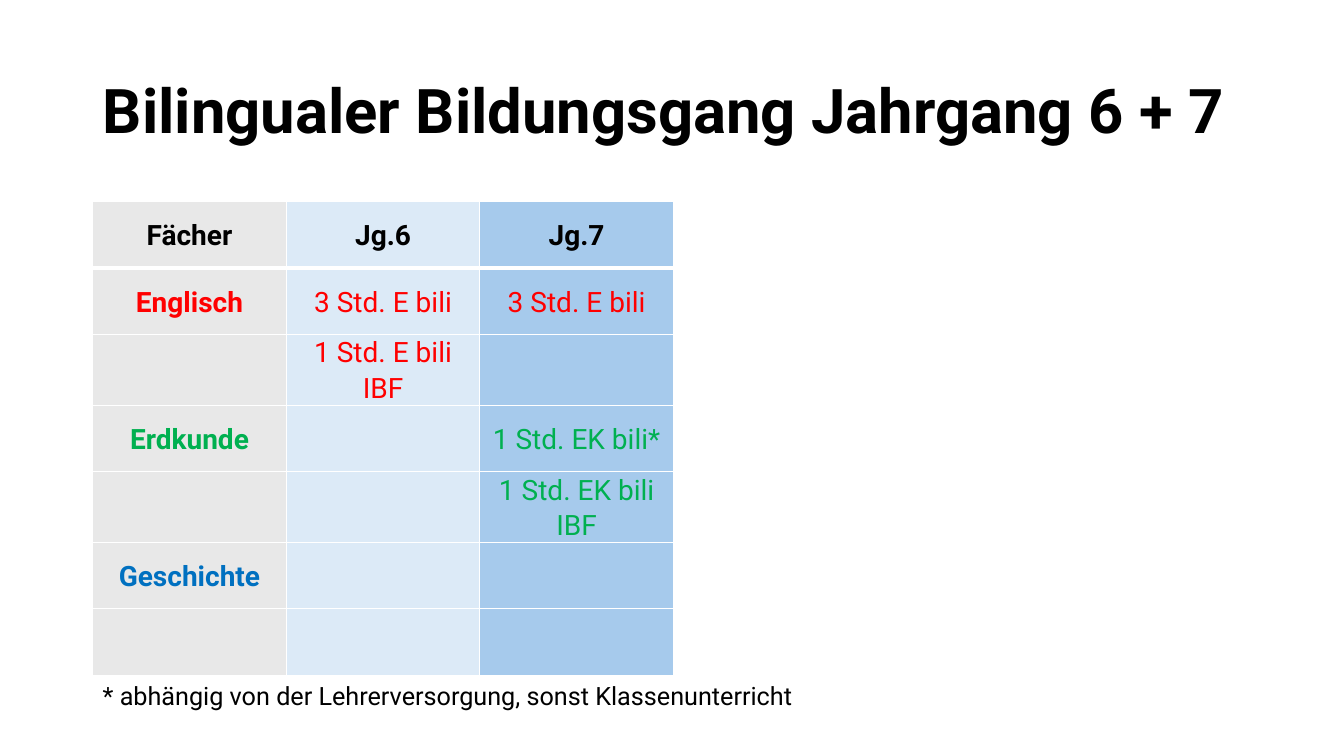
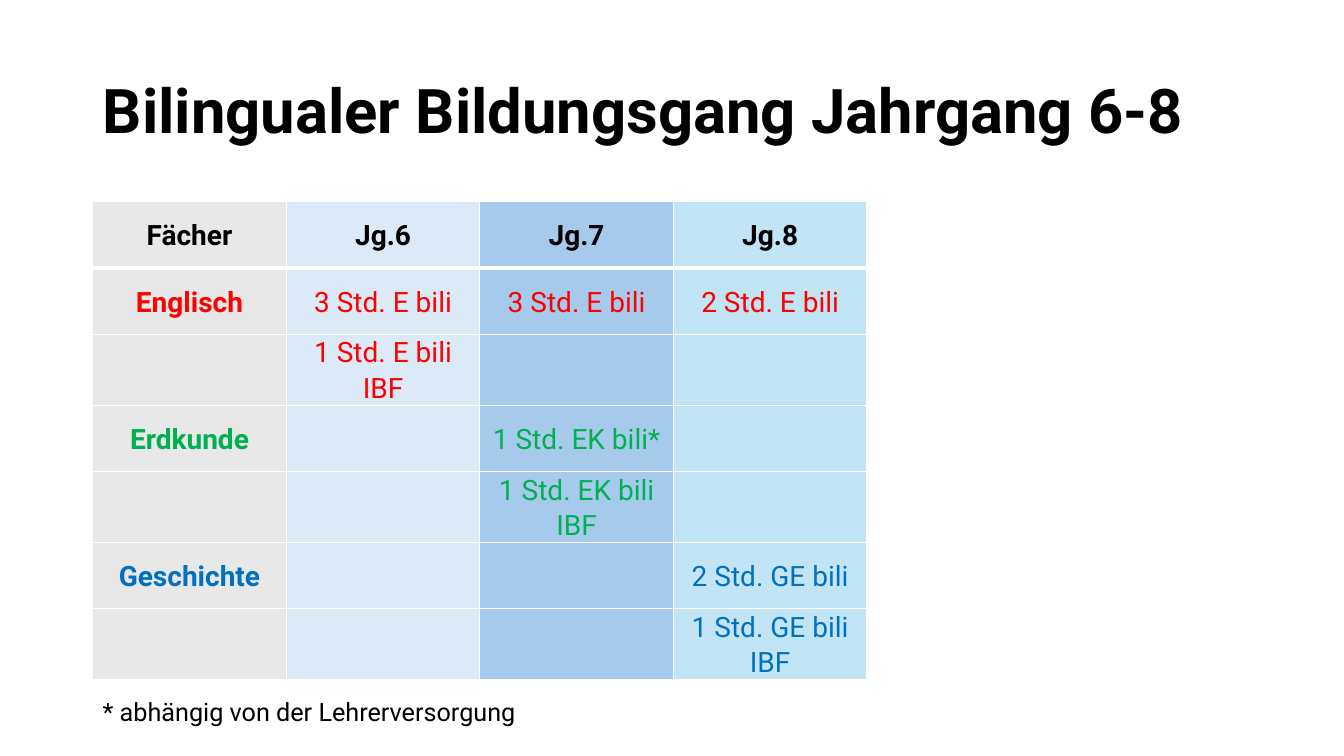
from lxml import etree
from pptx import Presentation
from pptx import util as u
from pptx.dml.color import RGBColor
from pptx.enum import text
from pptx.oxml import ns

PX = 9144
FONT = "Roboto"
BLACK = RGBColor(0x00, 0x00, 0x00)
WHITE = RGBColor(0xFF, 0xFF, 0xFF)
RED = RGBColor(0xFF, 0x00, 0x00)
GREEN = RGBColor(0x00, 0xB0, 0x50)
BLUE = RGBColor(0x00, 0x70, 0xC0)
GREY = RGBColor(0xE8, 0xE8, 0xE8)
PALE_BLUE = RGBColor(0xDC, 0xEA, 0xF7)
MID_BLUE = RGBColor(0xA6, 0xCA, 0xEC)
CYAN = RGBColor(0xC1, 0xE5, 0xF5)

TITLE_BOX = (92, 40, 1150, 145)
TABLE_LEFT, TABLE_TOP = 92, 200
COLUMN_WIDTH, ROW_HEIGHT = 192, 66
ROW_COLORS = (BLACK, RED, RED, GREEN, GREEN, BLUE, BLUE)

SUBJECTS = (GREY, ("Fächer", "Englisch", "", "Erdkunde", "", "Geschichte", ""))
GRADE_6 = (PALE_BLUE, ("Jg.6", "3 Std. E bili", "1 Std. E bili IBF", "", "", "", ""))
GRADE_7 = (MID_BLUE, ("Jg.7", "3 Std. E bili", "", "1 Std. EK bili*",
                      "1 Std. EK bili IBF", "", ""))
GRADE_8 = (CYAN, ("Jg.8", "2 Std. E bili", "", "", "",
                  "2 Std. GE bili", "1 Std. GE bili IBF"))


def px(*lengths):
    """Turn px lengths into EMU."""
    return [u.Emu(length * PX) for length in lengths]


def add_span(para, words, size, color=BLACK, bold=False):
    """Add one formatted run to a paragraph."""
    span = para.add_run()
    span.text = words
    span.font.name = FONT
    span.font.size = u.Pt(size)
    span.font.bold = bold
    span.font.color.rgb = color


def add_title(page, words):
    """Place and fill the title placeholder."""
    title = page.shapes.title
    title.left, title.top, title.width, title.height = px(*TITLE_BOX)
    frame = title.text_frame
    frame.word_wrap = True
    frame.auto_size = text.MSO_AUTO_SIZE.NONE
    frame.vertical_anchor = text.MSO_ANCHOR.MIDDLE
    para = frame.paragraphs[0]
    para.alignment = text.PP_ALIGN.LEFT
    para.line_spacing = 0.9
    add_span(para, words, 44, bold=True)


def add_borders(cell, row):
    """Draw white cell borders, thicker below the header row."""
    widths = {"L": 1, "R": 1, "T": 3 if row == 1 else 1, "B": 3 if row == 0 else 1}
    properties = cell._tc.get_or_add_tcPr()
    for side, width in widths.items():
        line = etree.SubElement(properties, ns.qn(f"a:ln{side}"), w=str(u.Pt(width)))
        fill = etree.SubElement(line, ns.qn("a:solidFill"))
        etree.SubElement(fill, ns.qn("a:srgbClr"), val=str(WHITE))


def fill_cell(cell, row, words, background, bold):
    """Format one table cell and write its words."""
    add_borders(cell, row)
    cell.fill.solid()
    cell.fill.fore_color.rgb = background
    cell.vertical_anchor = text.MSO_ANCHOR.MIDDLE
    cell.margin_left, cell.margin_right, cell.margin_top, cell.margin_bottom = px(7, 7, 0, 0)
    para = cell.text_frame.paragraphs[0]
    para.alignment = text.PP_ALIGN.CENTER
    para.line_spacing = 1.07
    para.space_before = para.space_after = u.Pt(6)
    if words:
        add_span(para, words, 20, ROW_COLORS[row], bold)


def add_timetable(page, left, top, columns):
    """Build the table of subjects by grade, one column at a time."""
    rows = len(ROW_COLORS)
    box = px(left, top, COLUMN_WIDTH * len(columns), ROW_HEIGHT * rows)
    table = page.shapes.add_table(rows, len(columns), *box).table
    for column, (background, entries) in enumerate(columns):
        for row, words in enumerate(entries):
            bold = row == 0 or column == 0
            fill_cell(table.cell(row, column), row, words, background, bold)


def add_footnote(page, left, top, width, words):
    """Write the footnote under the table."""
    frame = page.shapes.add_textbox(*px(left, top, width, 40)).text_frame
    frame.word_wrap = True
    frame.auto_size = text.MSO_AUTO_SIZE.SHAPE_TO_FIT_TEXT
    add_span(frame.paragraphs[0], words, 18)


def add_grade_page(deck, title, grades, note, note_top, note_width):
    """Add a slide with title, timetable and footnote."""
    page = deck.slides.add_slide(deck.slide_layouts[5])
    add_title(page, title)
    add_timetable(page, TABLE_LEFT, TABLE_TOP, (SUBJECTS, *grades))
    add_footnote(page, TABLE_LEFT, note_top, note_width, note)


def main():
    """Build and save the deck."""
    deck = Presentation()
    deck.slide_width, deck.slide_height = px(1333, 750)
    add_grade_page(deck, "Bilingualer Bildungsgang Jahrgang 6 + 7", (GRADE_6, GRADE_7),
                   "* abhängig von der Lehrerversorgung, sonst Klassenunterricht", 670, 782)
    add_grade_page(deck, "Bilingualer Bildungsgang Jahrgang 6-8", (GRADE_6, GRADE_7, GRADE_8),
                   "* abhängig von der Lehrerversorgung", 686, 666)
    deck.save("out.pptx")


if __name__ == "__main__":
    main()
